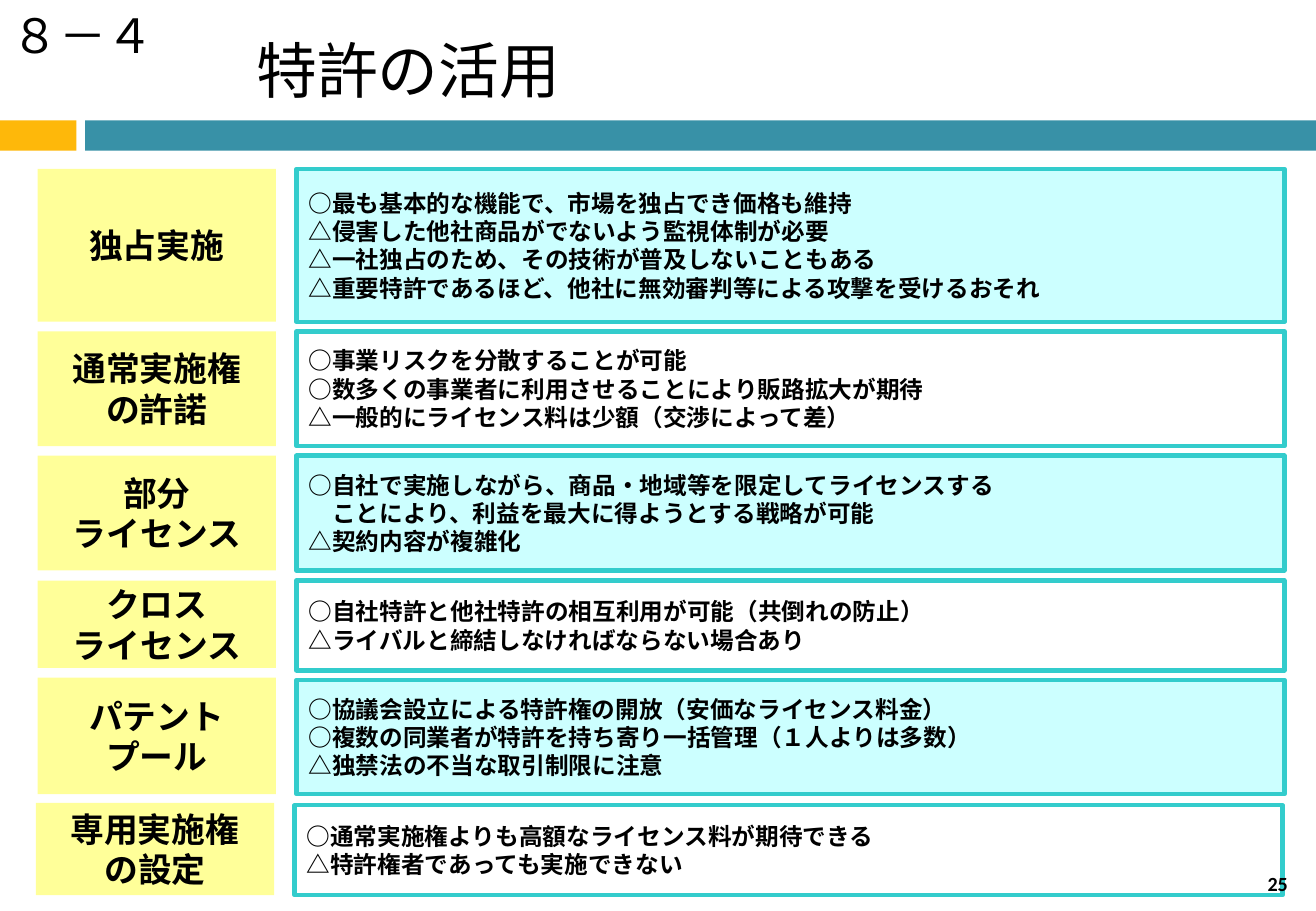
from dataclasses import dataclass

from pptx import Presentation
from pptx.dml.color import RGBColor
from pptx.enum.shapes import MSO_SHAPE
from pptx.enum.text import MSO_ANCHOR, PP_ALIGN
from pptx.util import Cm, Pt

RECTANGLE = MSO_SHAPE.RECTANGLE
TOP, MIDDLE = MSO_ANCHOR.TOP, MSO_ANCHOR.MIDDLE
LEFT, CENTER = PP_ALIGN.LEFT, PP_ALIGN.CENTER

BLACK, WHITE = "000000", "FFFFFF"
ORANGE, TEAL = "FEB80A", "3891A7"
YELLOW, PALE_CYAN, CYAN = "FFFF99", "CCFFFF", "33CCCC"

LABEL_LEFT, LABEL_WIDTH = 0.79, 4.98
DETAIL_LEFT, DETAIL_WIDTH = 6.2, 20.65


@dataclass
class Usage:
    """One way of using a patent; lengths in centimetres."""
    label: str
    details: str
    top: float
    height: float
    detail_top: float
    detail_height: float
    shift: float = 0


USAGES = [
    Usage("独占実施",
          "○最も基本的な機能で、市場を独占でき価格も維持\n"
          "△侵害した他社商品がでないよう監視体制が必要\n"
          "△一社独占のため、その技術が普及しないこともある\n"
          "△重要特許であるほど、他社に無効審判等による攻撃を受けるおそれ",
          3.53, 3.2, 3.53, 3.2),
    Usage("通常実施権\nの許諾",
          "○事業リスクを分散することが可能\n"
          "○数多くの事業者に利用させることにより販路拡大が期待\n"
          "△一般的にライセンス料は少額（交渉によって差）",
          6.93, 2.4, 6.93, 2.4),
    Usage("部分\nライセンス",
          "○自社で実施しながら、商品・地域等を限定してライセンスする\n"
          "　ことにより、利益を最大に得ようとする戦略が可能\n"
          "△契約内容が複雑化",
          9.53, 2.4, 9.53, 2.4),
    Usage("クロス\nライセンス",
          "○自社特許と他社特許の相互利用が可能（共倒れの防止）\n"
          "△ライバルと締結しなければならない場合あり",
          12.14, 1.83, 12.14, 1.88),
    Usage("パテント\nプール",
          "○協議会設立による特許権の開放（安価なライセンス料金）\n"
          "○複数の同業者が特許を持ち寄り一括管理（１人よりは多数）\n"
          "△独禁法の不当な取引制限に注意",
          14.17, 2.44, 14.22, 2.39),
    Usage("専用実施権\nの設定",
          "○通常実施権よりも高額なライセンス料が期待できる\n"
          "△特許権者であっても実施できない",
          16.79, 1.93, 16.84, 1.88, shift=-0.04),
]


def color(value: str) -> RGBColor:
    return RGBColor.from_string(value)


def write(shape, text: str, *, size: float, font: str, bold: bool = False,
          align=LEFT, anchor=TOP, wrap: bool = True) -> None:
    frame = shape.text_frame
    frame.word_wrap = wrap
    frame.vertical_anchor = anchor
    frame.text = text
    for paragraph in frame.paragraphs:
        paragraph.alignment = align
        for run in paragraph.runs:
            run.font.size = Pt(size)
            run.font.name = font
            run.font.bold = bold
            run.font.color.rgb = color(BLACK)


def add_box(slide, left: float, top: float, width: float, height: float,
            fill: str, line: str | None = None):
    box = slide.shapes.add_shape(RECTANGLE, Cm(left), Cm(top), Cm(width), Cm(height))
    box.shadow.inherit = False
    box.fill.solid()
    box.fill.fore_color.rgb = color(fill)
    if line:
        box.line.color.rgb = color(line)
        box.line.width = Pt(2.63)
    else:
        box.line.fill.background()
    return box


def add_text(slide, left: float, top: float, width: float, height: float,
             text: str, **text_format) -> None:
    text_box = slide.shapes.add_textbox(Cm(left), Cm(top), Cm(width), Cm(height))
    write(text_box, text, **text_format)


def add_usage(slide, usage: Usage, detail_fill: str) -> None:
    label = add_box(slide, LABEL_LEFT + usage.shift, usage.top,
                    LABEL_WIDTH, usage.height, YELLOW)
    write(label, usage.label, size=20, font="Arial", bold=True,
          align=CENTER, anchor=MIDDLE)
    detail = add_box(slide, DETAIL_LEFT + usage.shift, usage.detail_top,
                     DETAIL_WIDTH, usage.detail_height, detail_fill, CYAN)
    write(detail, usage.details, size=14, font="Calibri", bold=True, anchor=MIDDLE)


def main() -> None:
    presentation = Presentation()
    presentation.slide_width, presentation.slide_height = Cm(27.51), Cm(19.05)
    slide = presentation.slides.add_slide(presentation.slide_layouts[6])

    # Header band
    add_box(slide, 0, 2.52, 1.6, 0.63, ORANGE)
    add_box(slide, 1.78, 2.52, 25.73, 0.63, TEAL)

    # Ways of using a patent, with alternating detail fills
    for index, usage in enumerate(USAGES):
        add_usage(slide, usage, WHITE if index % 2 else PALE_CYAN)

    # Title, section number and page number
    add_text(slide, 5.11, 0.56, 6.93, 1.8, "特許の活用",
             size=36, font="Calibri", wrap=False)
    add_text(slide, 0, 0, 5.11, 1.45, "８－４", size=28, font="Arial")
    add_text(slide, 25.91, 18.14, 1.6, 0.69, "25", size=11.9, font="Calibri",
             bold=True, align=CENTER, anchor=MIDDLE)

    presentation.save("out.pptx")


if __name__ == "__main__":
    main()
